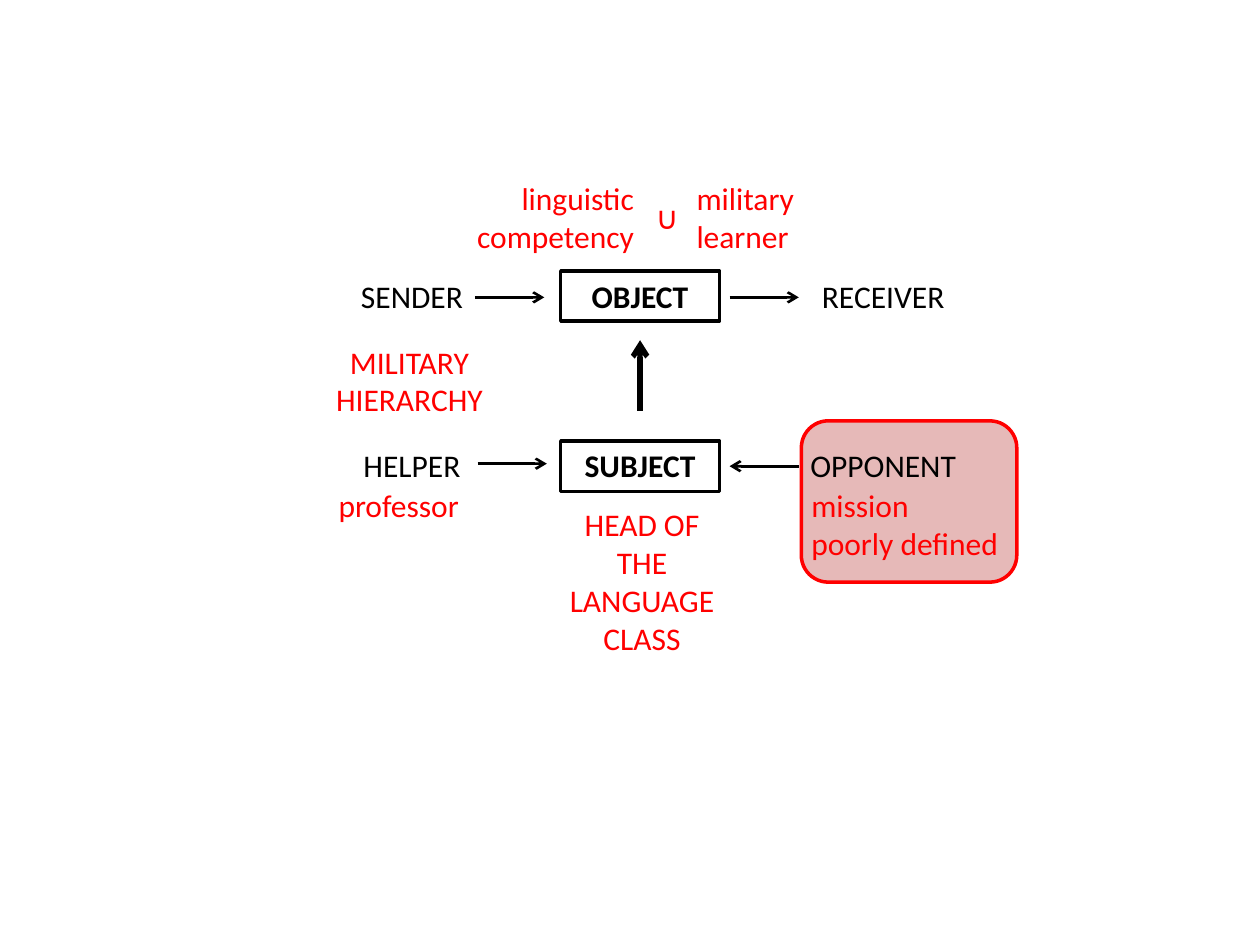
"""Build the actantial model slide for the head of the language class."""
from lxml.etree import SubElement
from pptx import Presentation
from pptx.dml.color import RGBColor
from pptx.enum.shapes import MSO_CONNECTOR, MSO_SHAPE
from pptx.enum.text import MSO_AUTO_SIZE, PP_ALIGN
from pptx.oxml.ns import qn
from pptx.util import Pt

PX = 9144
BLACK = RGBColor(0x00, 0x00, 0x00)
RED = RGBColor(0xFF, 0x00, 0x00)
PINK = RGBColor(0xE6, 0xB9, 0xB8)
LEFT, CENTER, RIGHT = PP_ALIGN.LEFT, PP_ALIGN.CENTER, PP_ALIGN.RIGHT
TOP_ROW, BOTTOM_ROW = 215, 349
BOX_LEFT, BOX_WIDTH, ROW_HEIGHT = 445, 126, 40


def add_label(shapes, lines, box, color, alignment=CENTER, bold=False):
    label = shapes.add_textbox(*(value * PX for value in box))
    frame = label.text_frame
    frame.word_wrap = True
    frame.auto_size = MSO_AUTO_SIZE.SHAPE_TO_FIT_TEXT
    for index, line in enumerate(lines):
        paragraph = frame.paragraphs[0] if index == 0 else frame.add_paragraph()
        paragraph.alignment = alignment
        run = paragraph.add_run()
        run.text = line
        run.font.name = "Calibri"
        run.font.size = Pt(18)
        run.font.bold = bold
        run.font.color.rgb = color


def add_frame(kind, box, line_color, fill_color=None):
    shape = slide.shapes.add_shape(kind, *(value * PX for value in box))
    shape.shadow.inherit = False
    shape.line.color.rgb = line_color
    shape.line.width = Pt(2)
    if fill_color is None:
        shape.fill.background()
    else:
        shape.fill.solid()
        shape.fill.fore_color.rgb = fill_color


presentation = Presentation()
presentation.slide_width = 1000 * PX
presentation.slide_height = 750 * PX
slide = presentation.slides.add_slide(presentation.slide_layouts[6])

add_frame(MSO_SHAPE.ROUNDED_RECTANGLE, (636, 334, 171, 128), RED, PINK)

add_label(slide.shapes, ["MILITARY HIERARCHY"], (213, 267, 224, 71), RED)
add_label(slide.shapes, ["HEAD OF THE LANGUAGE CLASS"], (432, 396, 155, 131), RED)

union = slide.shapes.add_group_shape()
add_label(union.shapes, ["∪"], (508, 152, 43, 40), RED)
add_label(union.shapes, ["linguistic", "competency"], (358, 137, 155, 71), RED, RIGHT)
add_label(union.shapes, ["military", "learner"], (543, 137, 106, 71), RED, LEFT)

for role, left, top, width, bold in [
    ("SENDER", 264, TOP_ROW, 126, False),
    ("HELPER", 252, BOTTOM_ROW, 150, False),
    ("OPPONENT", 626, BOTTOM_ROW, 150, False),
    ("RECEIVER", 626, TOP_ROW, 150, False),
    ("OBJECT", BOX_LEFT, TOP_ROW, BOX_WIDTH, True),
    ("SUBJECT", BOX_LEFT, BOTTOM_ROW, BOX_WIDTH, True),
]:
    add_label(slide.shapes, [role], (left, top, width, ROW_HEIGHT), BLACK, bold=bold)

for top in (TOP_ROW, BOTTOM_ROW + 1):
    add_frame(MSO_SHAPE.RECTANGLE, (BOX_LEFT, top, BOX_WIDTH, ROW_HEIGHT), BLACK)

for start_x, start_y, end_x, end_y, weight in [
    (508, 326, 508, 270, 3),
    (377, 236, 432, 236, 1.5),
    (579, 236, 634, 236, 1.5),
    (379, 368, 434, 368, 1.5),
    (634, 370, 579, 370, 1.5),
]:
    arrow = slide.shapes.add_connector(
        MSO_CONNECTOR.STRAIGHT, start_x * PX, start_y * PX, end_x * PX, end_y * PX
    )
    arrow.line.color.rgb = BLACK
    arrow.line.width = Pt(weight)
    SubElement(arrow.line._get_or_add_ln(), qn("a:tailEnd"), type="arrow")
    SubElement(arrow._element.spPr, qn("a:effectLst"))

add_label(slide.shapes, ["professor"], (185, 381, 189, 40), RED, RIGHT)
add_label(slide.shapes, ["mission", "poorly defined"], (634, 381, 181, 71), RED, LEFT)

presentation.save("out.pptx")
